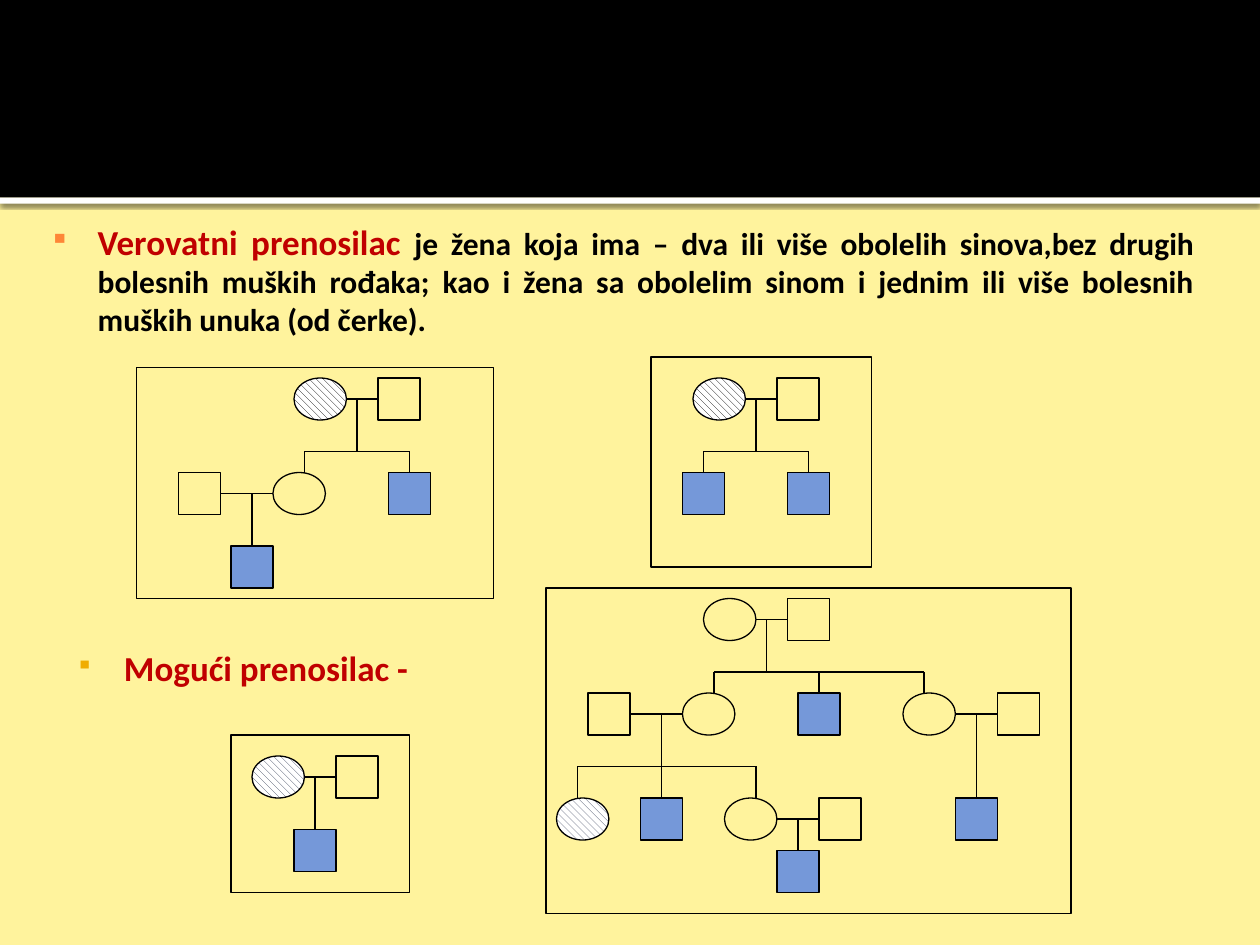
from typing import NamedTuple

from lxml.etree import SubElement as Sub
from pptx import Presentation
from pptx.dml.color import RGBColor
from pptx.enum.dml import MSO_PATTERN as Pattern
from pptx.enum.shapes import MSO_CONNECTOR as Link, MSO_SHAPE as Kind
from pptx.enum.text import PP_ALIGN as Align
from pptx.oxml.ns import qn
from pptx.util import Emu, Pt

SCALE = 7620  # EMU in one px, 120 px to the inch
SIDE, OVAL = 40, 50
INDENT = 46

BLACK = RGBColor(0x00, 0x00, 0x00)
WHITE = RGBColor(0xFF, 0xFF, 0xFF)
CREAM = RGBColor(0xFF, 0xF3, 0x9D)
BLUE = RGBColor(0x75, 0x98, 0xD9)
NAVY = RGBColor(0x3B, 0x43, 0x5B)
RED = RGBColor(0xC0, 0x00, 0x00)
ORANGE = RGBColor(0xFE, 0x86, 0x37)
AMBER = RGBColor(0xF0, 0xAD, 0x00)


class Person(NamedTuple):
    x: int
    y: int
    mark: bool = False  # a woman who carries or a man who is ill


class Union(NamedTuple):
    left: int
    right: int
    y: int
    stem: int
    end: int


class Sibs(NamedTuple):
    y: int
    end: int
    kids: tuple[int, ...]


class Family(NamedTuple):
    frame: tuple[int, int, int, int]
    hatch: RGBColor
    women: list[Person]
    men: list[Person]
    unions: list[Union]
    sibs: list[Sibs]


class Words(NamedTuple):
    text: str
    size: int
    color: RGBColor


class Note(NamedTuple):
    box: tuple[int, int, int, int]
    align: Align
    bullet: RGBColor
    share: int  # bullet size in percent
    words: list[Words]


FAMILIES = [
    Family((130, 350, 340, 220), BLACK,
           [Person(280, 360, True), Person(260, 450)],
           [Person(360, 360), Person(170, 450),
            Person(370, 450, True), Person(220, 520, True)],
           [Union(330, 360, 380, 340, 430), Union(210, 260, 470, 240, 520)],
           [Sibs(430, 450, (290, 390))]),
    Family((620, 340, 210, 200), BLACK,
           [Person(660, 360, True)],
           [Person(740, 360), Person(650, 450, True), Person(750, 450, True)],
           [Union(710, 740, 380, 720, 430)],
           [Sibs(430, 450, (670, 770))]),
    Family((220, 700, 170, 150), NAVY,
           [Person(240, 720, True)],
           [Person(320, 720), Person(280, 790, True)],
           [Union(290, 320, 740, 300, 790)],
           []),
    Family((520, 560, 500, 310), NAVY,
           [Person(670, 570), Person(650, 660), Person(860, 660),
            Person(530, 760, True), Person(690, 760)],
           [Person(750, 570), Person(560, 660), Person(760, 660, True),
            Person(950, 660), Person(610, 760, True), Person(780, 760),
            Person(910, 760, True), Person(740, 810, True)],
           [Union(720, 750, 590, 730, 640), Union(600, 650, 680, 630, 730),
            Union(910, 950, 680, 930, 760), Union(740, 780, 780, 760, 810)],
           [Sibs(640, 660, (680, 780, 880)), Sibs(730, 760, (550, 630, 720))]),
]

NOTES = [
    Note((47, 210, 1091, 110), Align.JUSTIFY, ORANGE, 80, [
        Words("Verovatni prenosilac ", 20, RED),
        Words("je žena koja ima – dva ili više obolelih sinova,bez drugih "
              "bolesnih muških rođaka; kao i žena sa obolelim sinom i jednim "
              "ili više bolesnih muških unuka (od čerke).", 18, BLACK)]),
    Note((72, 616, 407, 41), Align.LEFT, AMBER, 70,
         [Words("Mogući prenosilac -", 20, RED)]),
]


def px(*nums: int) -> list[Emu]:
    return [Emu(n * SCALE) for n in nums]


def shape(kind: Kind, box: tuple, fill: RGBColor | None = None,
          edge: bool = True):
    item = slide.shapes.add_shape(kind, *px(*box))
    item.shadow.inherit = False
    if fill is None:
        item.fill.background()
    else:
        item.fill.solid()
        item.fill.fore_color.rgb = fill
    if edge:
        item.line.color.rgb = BLACK
        item.line.width = Pt(0.75)
    else:
        item.line.fill.background()
    return item


def line(x1: int, y1: int, x2: int, y2: int, sites: dict) -> None:
    item = slide.shapes.add_connector(Link.STRAIGHT, *px(x1, y1, x2, y2))
    item.line.color.rgb = BLACK
    item.line.width = Pt(0.75)
    Sub(item._element.spPr, qn("a:effectLst"))
    if (x1, y1) in sites:
        item.begin_connect(*sites[x1, y1])
    if (x2, y2) in sites:
        item.end_connect(*sites[x2, y2])


def draw(fam: Family) -> None:
    sites = {}
    for x, y, mark in fam.women:
        item = shape(Kind.OVAL, (x, y, OVAL, SIDE))
        if mark:
            item.fill.patterned()
            item.fill.pattern = Pattern.WIDE_DOWNWARD_DIAGONAL
            item.fill.fore_color.rgb = fam.hatch
            item.fill.back_color.rgb = WHITE
    for x, y, mark in fam.men:
        item = shape(Kind.RECTANGLE, (x, y, SIDE, SIDE), BLUE if mark else None)
        half = SIDE // 2
        spots = ((x + half, y), (x, y + half),
                 (x + half, y + SIDE), (x + SIDE, y + half))
        sites |= {spot: (item, i) for i, spot in enumerate(spots)}
    for left, right, y, stem, end in fam.unions:
        line(left, y, right, y, sites)
        line(stem, y, stem, end, sites)
    for y, end, kids in fam.sibs:
        line(kids[0], y, kids[-1], y, sites)
        for x in kids:
            line(x, y, x, end, sites)
    shape(Kind.RECTANGLE, fam.frame)


def write(note: Note) -> None:
    frame = slide.shapes.add_textbox(*px(*note.box)).text_frame
    look = dict(word_wrap=True, margin_left=0, margin_top=0,
                margin_right=0, margin_bottom=0)
    for key, val in look.items():
        setattr(frame, key, val)
    para = frame.paragraphs[0]
    para.alignment = note.align
    props = para._p.get_or_add_pPr()
    props.set("marL", str(INDENT * SCALE))
    props.set("indent", str(-INDENT * SCALE))
    tint = Sub(props, qn("a:buClr"))
    Sub(tint, qn("a:srgbClr"), val=str(note.bullet))
    Sub(props, qn("a:buSzPct"), val=str(note.share * 1000))
    Sub(props, qn("a:buChar"), char="▪")
    for text, size, color in note.words:
        run = para.add_run()
        run.text = text
        for key, val in dict(name="Calibri", size=Pt(size), bold=True).items():
            setattr(run.font, key, val)
        run.font.color.rgb = color


deck = Presentation()
deck.slide_width, deck.slide_height = px(1200, 900)
slide = deck.slides.add_slide(deck.slide_layouts[6])
slide.background.fill.solid()
slide.background.fill.fore_color.rgb = CREAM

# Header band with a shaded white rule
rule = shape(Kind.RECTANGLE, (0, 188, 1200, 6), WHITE, edge=False)
shade = Sub(rule._element.spPr.find(qn("a:effectLst")), qn("a:outerShdw"),
            blurRad=str(Pt(2.5)), dist=str(Pt(0.8)), dir="5400000",
            algn="tl", rotWithShape="0")
tone = Sub(shade, qn("a:srgbClr"), val=str(BLACK))
Sub(tone, qn("a:alpha"), val="60000")
shape(Kind.RECTANGLE, (0, 0, 1200, 188), BLACK, edge=False)

# Pedigrees
for fam in FAMILIES:
    draw(fam)

# Definitions
for note in NOTES:
    write(note)

deck.save("out.pptx")
